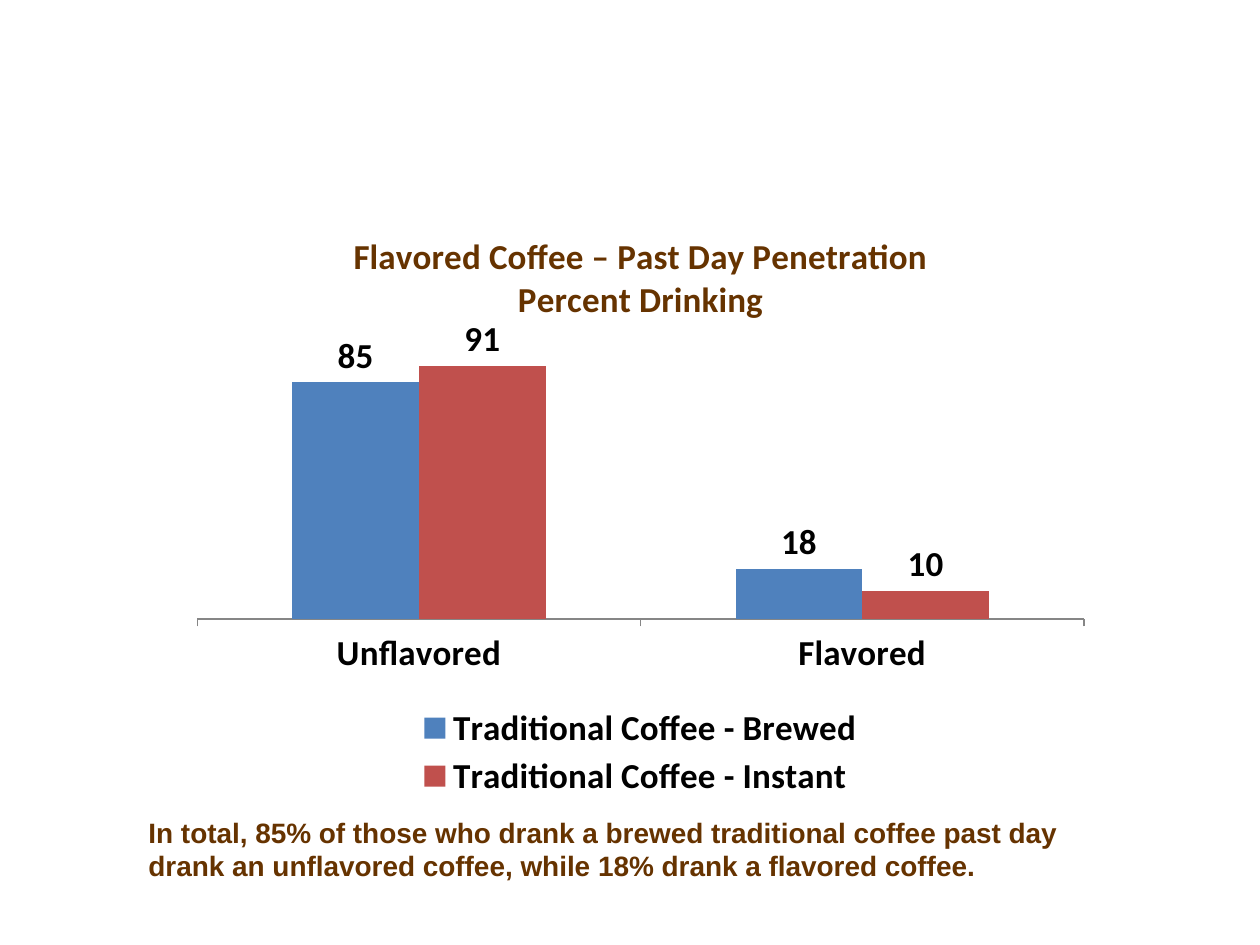
import pptx
import pptx.chart.data
import pptx.dml.color
import pptx.enum.chart
import pptx.enum.text
import pptx.oxml
import pptx.oxml.ns
import pptx.util

TITLE = ["Flavored Coffee – Past Day Penetration", "Percent Drinking"]
CATEGORIES = ["Unflavored", "Flavored"]
SERIES = [
    ("Traditional Coffee - Brewed", (85, 18), "brewed"),
    ("Traditional Coffee - Instant", (91, 10), "instant"),
]
SUMMARY = ("In total, 85% of those who drank a brewed traditional coffee past day "
           "drank an unflavored coffee, while 18% drank a flavored coffee.")

THEME = {
    "brewed": "4F81BD", "instant": "C0504D", "accent": "663300",
    "text": "000000", "axis": "868686",
    "chart_font": "Calibri", "body_font": "Arial",
    "chart_size": 20, "body_size": 16,
}

# left, top, width, height in inches
CHART_BOX = (1.42, 1.67, 7.33, 4.7)
SUMMARY_BOX = (1.08, 6.42, 7.42, 0.64)
# x, y, w, h as shares of the chart
PLOT_SHARE = (0.02, 0.22, 0.96, 0.47)
LEGEND_SHARE = (0.26, 0.83, 0.48, 0.17)


def rgb(name):
    return pptx.dml.color.RGBColor.from_string(THEME[name])


def style(font, kind, color):
    font.name = THEME[kind + "_font"]
    font.size = pptx.util.Pt(THEME[kind + "_size"])
    font.bold = True
    font.color.rgb = rgb(color)


def set_layout(parent, index, shares, inner=False):
    """Place a chart element by shares of the chart's size."""
    for old in parent.findall(pptx.oxml.ns.qn("c:layout")):
        parent.remove(old)
    target = '<c:layoutTarget val="inner"/>' if inner else ""
    modes = "".join(f'<c:{a}Mode val="edge"/>' for a in "xy")
    sizes = "".join(f'<c:{a} val="{v}"/>' for a, v in zip("xywh", shares))
    parent.insert(index, pptx.oxml.parse_xml(
        f'<c:layout {pptx.oxml.ns.nsdecls("c")}><c:manualLayout>'
        f'{target}{modes}{sizes}</c:manualLayout></c:layout>'))


def add_penetration_chart(s):
    enums = pptx.enum.chart
    data = pptx.chart.data.CategoryChartData()
    data.categories = CATEGORIES
    for name, values, _ in SERIES:
        data.add_series(name, values)
    chart = s.shapes.add_chart(enums.XL_CHART_TYPE.COLUMN_CLUSTERED,
                               *map(pptx.util.Inches, CHART_BOX), data).chart
    style(chart.font, "chart", "text")

    tf = chart.chart_title.text_frame
    tf.text = "\n".join(TITLE)
    for p in tf.paragraphs:
        for r in p.runs:
            style(r.font, "chart", "accent")

    axis = chart.category_axis
    axis.major_tick_mark = enums.XL_TICK_MARK.OUTSIDE
    axis.format.line.color.rgb = rgb("axis")
    style(axis.tick_labels.font, "chart", "text")
    values_axis = chart.value_axis
    values_axis.minimum_scale, values_axis.maximum_scale = 0, 100
    values_axis.has_major_gridlines = False
    values_axis.visible = False

    plot = chart.plots[0]
    plot.gap_width, plot.overlap = 150, 0
    plot.vary_by_categories = False
    for series, (_, _, color) in zip(plot.series, SERIES):
        series.format.fill.solid()
        series.format.fill.fore_color.rgb = rgb(color)
        labels = series.data_labels
        labels.show_value = True
        labels.position = enums.XL_LABEL_POSITION.OUTSIDE_END
        style(labels.font, "chart", "text")

    chart.has_legend = True
    legend = chart.legend
    legend.position = enums.XL_LEGEND_POSITION.BOTTOM
    legend.include_in_layout = False
    style(legend.font, "chart", "text")

    root = chart._element
    set_layout(root.find(".//" + pptx.oxml.ns.qn("c:plotArea")), 0, PLOT_SHARE, inner=True)
    set_layout(root.find(".//" + pptx.oxml.ns.qn("c:legend")), 1, LEGEND_SHARE)


def add_summary(s):
    tf = s.shapes.add_textbox(*map(pptx.util.Inches, SUMMARY_BOX)).text_frame
    tf.word_wrap = True
    tf.auto_size = pptx.enum.text.MSO_AUTO_SIZE.SHAPE_TO_FIT_TEXT
    tf.text = SUMMARY
    style(tf.paragraphs[0].runs[0].font, "body", "accent")


def main():
    prs = pptx.Presentation()
    prs.slide_width, prs.slide_height = pptx.util.Inches(10), pptx.util.Inches(7.5)
    s = prs.slides.add_slide(prs.slide_layouts[6])
    add_summary(s)
    add_penetration_chart(s)
    prs.save("out.pptx")


if __name__ == "__main__":
    main()
